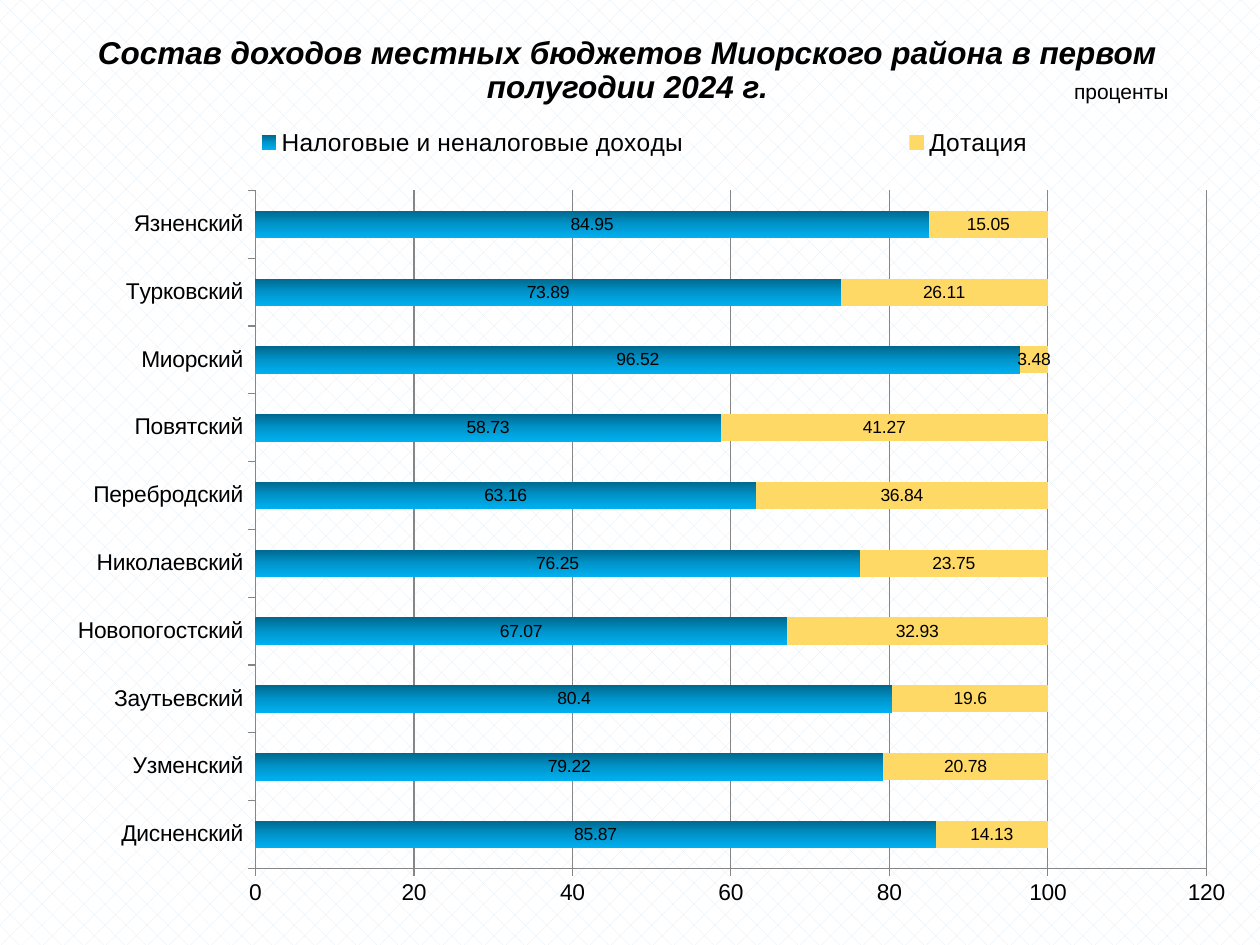
from copy import deepcopy

from lxml import etree
from pptx import Presentation
from pptx.chart.data import CategoryChartData
from pptx.dml.color import RGBColor
from pptx.enum.chart import XL_CHART_TYPE, XL_LABEL_POSITION, XL_LEGEND_POSITION, XL_TICK_MARK
from pptx.enum.dml import MSO_PATTERN
from pptx.enum.shapes import MSO_SHAPE
from pptx.enum.text import MSO_ANCHOR, PP_ALIGN
from pptx.oxml.ns import qn
from pptx.util import Inches, Pt

COLORS = {
    "text": "000000",
    "grid": "868686",
    "pattern": "DEEBF7",
    "paper": "FFFFFF",
    "tax_top": "00688E",
    "tax_middle": "0094CA",
    "tax_bottom": "00B0F0",
    "grant": "FFD966",
}
FONT = "Arial"
INCOME = {
    "Дисненский": (85.87, 14.13),
    "Узменский": (79.22, 20.78),
    "Заутьевский": (80.4, 19.6),
    "Новопогостский": (67.07, 32.93),
    "Николаевский": (76.25, 23.75),
    "Перебродский": (63.16, 36.84),
    "Повятский": (58.73, 41.27),
    "Миорский": (96.52, 3.48),
    "Турковский": (73.89, 26.11),
    "Язненский": (84.95, 15.05),
}


def color(name):
    return RGBColor.from_string(COLORS[name])


def style_font(font, size, bold=False, italic=False):
    font.name = FONT
    font.size = Pt(size)
    font.bold = bold
    font.italic = italic
    font.color.rgb = color("text")


def write_centered(frame, text):
    frame.word_wrap = True
    frame.vertical_anchor = MSO_ANCHOR.MIDDLE
    frame.text = text
    paragraph = frame.paragraphs[0]
    paragraph.alignment = PP_ALIGN.CENTER
    return paragraph


def set_background(slide):
    fill = slide.background.fill
    fill.patterned()
    fill.pattern = MSO_PATTERN.DIAGONAL_BRICK
    fill.fore_color.rgb = color("pattern")
    fill.back_color.rgb = color("paper")


def add_title(slide, text):
    title = slide.shapes.add_textbox(Inches(0.67), Inches(0.29), Inches(8.62), Inches(0.55))
    heading = write_centered(title.text_frame, text)
    heading.line_spacing = 0.9
    style_font(heading.font, 18, bold=True, italic=True)


def add_unit(slide, text):
    unit = slide.shapes.add_shape(
        MSO_SHAPE.ROUNDED_RECTANGLE, Inches(8.23), Inches(0.6), Inches(1.34), Inches(0.24)
    )
    unit.shadow.inherit = False
    unit.fill.background()
    unit.line.fill.background()
    style_font(write_centered(unit.text_frame, text).font, 12)


def make_layout(x, y, w, h, inner=False):
    layout = etree.Element(qn("c:layout"))
    manual = etree.SubElement(layout, qn("c:manualLayout"))
    settings = [("layoutTarget", "inner")] if inner else []
    settings += [("xMode", "edge"), ("yMode", "edge"), ("x", x), ("y", y), ("w", w), ("h", h)]
    for tag, value in settings:
        etree.SubElement(manual, qn(f"c:{tag}")).set("val", str(value))
    return layout


def place_chart_parts(chart):
    plot_area = chart.element.find(f".//{qn('c:plotArea')}")
    legend = chart.element.find(f".//{qn('c:legend')}")
    for part in (plot_area, legend):
        for layout in part.findall(qn("c:layout")):
            part.remove(layout)
    plot_area.insert(0, make_layout(0.18, 0.1, 0.79, 0.83, inner=True))
    plot_area[0].find(f".//{qn('c:x')}").set("val", "0.176")
    plot_area[0].find(f".//{qn('c:y')}").set("val", "0.104")
    plot_area[0].find(f".//{qn('c:w')}").set("val", "0.792")
    plot_area[0].find(f".//{qn('c:h')}").set("val", "0.833")
    legend.find(qn("c:legendPos")).addnext(make_layout(0, 0.01, 1, 0.07))


def fill_gradient(series, names):
    fill = series.format.fill
    fill.gradient()
    fill.gradient_angle = 270
    stop_list = series.format.fill.gradient_stops
    first_stop = series._element.find(f".//{qn('a:gs')}")
    first_stop.addnext(deepcopy(first_stop))
    stop_list = fill.gradient_stops
    for index, (stop, name) in enumerate(zip(stop_list, names)):
        stop.color.rgb = color(name)
        stop.position = index / (len(names) - 1)


def style_axis(axis):
    axis.major_tick_mark = XL_TICK_MARK.OUTSIDE
    axis.minor_tick_mark = XL_TICK_MARK.NONE
    axis.format.line.color.rgb = color("grid")
    style_font(axis.tick_labels.font, 13)


def style_labels(series):
    labels = series.data_labels
    labels.show_value = True
    labels.position = XL_LABEL_POSITION.CENTER
    style_font(labels.font, 10)


def add_income_chart(slide):
    data = CategoryChartData()
    data.categories = list(INCOME)
    taxes, grants = zip(*INCOME.values())
    data.add_series("Налоговые и неналоговые доходы", taxes)
    data.add_series("Дотация", grants)
    chart = slide.shapes.add_chart(
        XL_CHART_TYPE.BAR_STACKED, Inches(0.35), Inches(0.84), Inches(9.53), Inches(6.46), data
    ).chart
    chart.has_title = False
    chart.font.name = "Calibri"
    chart.font.size = Pt(18)

    plot = chart.plots[0]
    plot.gap_width = 150
    plot.overlap = 100
    plot.vary_by_categories = False
    tax_series, grant_series = plot.series
    fill_gradient(tax_series, ["tax_top", "tax_middle", "tax_bottom"])
    grant_series.format.fill.solid()
    grant_series.format.fill.fore_color.rgb = color("grant")
    for series in plot.series:
        style_labels(series)

    style_axis(chart.category_axis)
    style_axis(chart.value_axis)
    chart.value_axis.minimum_scale = 0
    chart.value_axis.maximum_scale = 120
    chart.value_axis.major_unit = 20
    chart.value_axis.has_major_gridlines = True
    chart.value_axis.major_gridlines.format.line.color.rgb = color("grid")

    chart.has_legend = True
    chart.legend.position = XL_LEGEND_POSITION.TOP
    chart.legend.include_in_layout = False
    style_font(chart.legend.font, 14)
    place_chart_parts(chart)


def main():
    presentation = Presentation()
    presentation.slide_width = Inches(10)
    presentation.slide_height = Inches(7.5)
    slide = presentation.slides.add_slide(presentation.slide_layouts[6])
    set_background(slide)
    add_title(slide, "Состав доходов местных бюджетов Миорского района в первом полугодии 2024 г.")
    add_unit(slide, "проценты")
    add_income_chart(slide)
    presentation.save("out.pptx")


if __name__ == "__main__":
    main()
